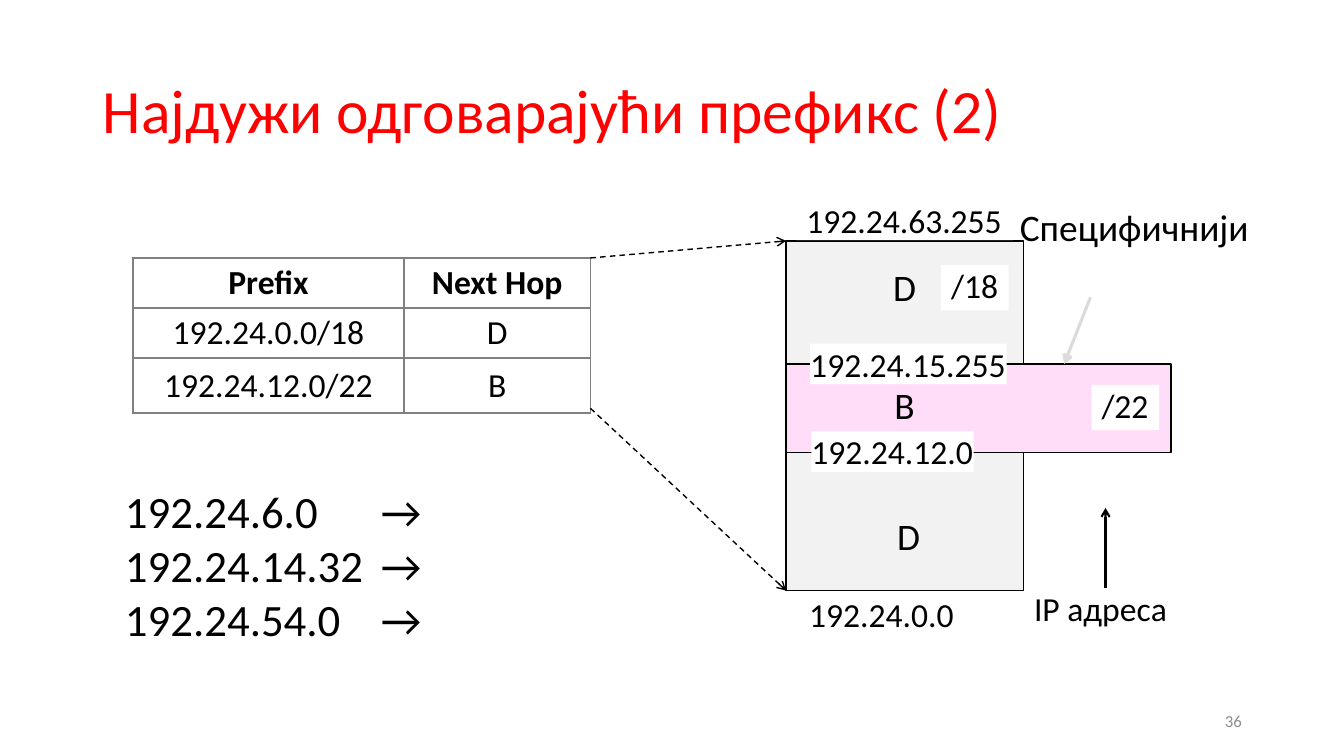
"""Build the slide on longest matching prefix routing."""
from lxml.etree import SubElement as Sub
from pptx import Presentation
from pptx.dml.color import RGBColor
from pptx.enum.dml import MSO_LINE as Dash
from pptx.enum.shapes import MSO_CONNECTOR as Link, MSO_SHAPE as Shape
from pptx.enum.text import MSO_ANCHOR as Anchor, PP_ALIGN as Align
from pptx.oxml.ns import qn
from pptx.util import Cm, Pt

rgb = RGBColor.from_string


def write(frame, lines, size, align=Align.LEFT, color="000000", bold=False):
    """Fill a text frame with one run per paragraph."""
    for i, line in enumerate(lines):
        para = frame.add_paragraph() if i else frame.paragraphs[0]
        para.alignment = align
        run = para.add_run()
        run.text = line
        run.font.name = "Calibri"
        run.font.size = Pt(size)
        run.font.bold = bold
        run.font.color.rgb = rgb(color)


deck = Presentation()
deck.slide_width, deck.slide_height = Cm(33.87), Cm(19.05)
slide = deck.slides.add_slide(deck.slide_layouts[5])
shapes = slide.shapes

title = shapes.title
title.left, title.top, title.width, title.height = Cm(2.34), Cm(1.02), Cm(29.21), Cm(3.68)
title.text_frame.vertical_anchor = Anchor.MIDDLE
write(title.text_frame, ["Најдужи одговарајући префикс (2)"], 44, color="FF0000")
title.text_frame.paragraphs[0].line_spacing = 0.9

rows = [("Prefix", "Next Hop"), ("192.24.0.0/18", "D"), ("192.24.12.0/22", "B")]
table = shapes.add_table(3, 2, Cm(3.35), Cm(6.5), Cm(11.53), Cm(3.91)).table
for col, width in zip(table.columns, (6.83, 4.7)):
    col.width = Cm(width)
for row, height, texts in zip(table.rows, (1.27, 1.26, 1.38), rows):
    row.height = Cm(height)
    for cell, text in zip(row.cells, texts):
        cell.vertical_anchor = Anchor.MIDDLE
        cell.margin_left = cell.margin_right = Cm(0.18)
        cell.margin_top = cell.margin_bottom = Cm(0.08)
        write(cell.text_frame, [text], 24, Align.CENTER, bold=texts == rows[0])
        props = cell._tc.get_or_add_tcPr()
        for side in ("a:lnL", "a:lnR", "a:lnT", "a:lnB"):
            edge = Sub(props, qn(side), w=str(Pt(1.5)))
            Sub(Sub(edge, qn("a:solidFill")), qn("a:srgbClr"), val="808080")
        cell.fill.solid()
        cell.fill.fore_color.rgb = rgb("FFFFFF")

blocks = [
    (19.81, 6.07, 5.99, 8.81, "F2F2F2"),
    (19.81, 9.17, 9.7, 2.24, "FFDDF9"),
]
for left, top, width, height, color in blocks:
    block = shapes.add_shape(Shape.RECTANGLE, Cm(left), Cm(top), Cm(width), Cm(height))
    block.shadow.inherit = False
    block.fill.solid()
    block.fill.fore_color.rgb = rgb(color)
    block.line.color.rgb = rgb("000000")
    block.line.width = Pt(1)

labels = [
    ("192.24.0.0", 20.14, 14.96, 4.17, 1.02, 0.25),
    ("192.24.63.255", 20.07, 5.03, 5.46, 1.02, 0.25),
    ("/18", 23.72, 6.68, 1.7, 1.14, 0.25),
    ("/22", 27.51, 9.7, 1.7, 1.14, 0.25),
    ("192.24.12.0", 20.45, 10.87, 4.09, 1.02, 0),
    ("192.24.15.255", 20.42, 8.66, 4.95, 1.02, 0),
]
for text, left, top, width, height, inset in labels:
    label = shapes.add_shape(Shape.RECTANGLE, Cm(left), Cm(top), Cm(width), Cm(height))
    label.shadow.inherit = False
    label.fill.solid()
    label.fill.fore_color.rgb = rgb("FFFFFF")
    label.line.fill.background()
    frame = label.text_frame
    frame.word_wrap = False
    frame.vertical_anchor = Anchor.TOP
    frame.margin_left = frame.margin_right = Cm(inset)
    frame.margin_top = frame.margin_bottom = 0
    write(frame, [text], 24)

arrows = [
    (27.86, 14.81, 27.86, 12.8, "000000", 1.5, None),
    (14.88, 6.5, 19.81, 6.07, "000000", 1, Dash.DASH),
    (14.88, 10.29, 19.81, 14.88, "000000", 1, Dash.DASH),
    (27.48, 7.49, 26.82, 9.17, "DBDBDB", 2.25, None),
]
for x1, y1, x2, y2, color, width, dash in arrows:
    arrow = shapes.add_connector(Link.STRAIGHT, Cm(x1), Cm(y1), Cm(x2), Cm(y2))
    arrow.line.color.rgb = rgb(color)
    arrow.line.width = Pt(width)
    arrow.line.dash_style = dash
    Sub(arrow.line._get_or_add_ln(), qn("a:tailEnd"), type="arrow")
    Sub(arrow._element.spPr, qn("a:effectLst"))

tests = ["192.24.6.0\t→", "192.24.14.32\t→", "192.24.54.0\t→"]
notes = [
    (["36"], 23.93, 17.65, 7.62, 1.02, 12, Align.RIGHT, "8C8C8C", Anchor.MIDDLE),
    (["IP адреса"], 25.81, 14.68, 3.89, 1.27, 24, Align.LEFT, "000000", Anchor.TOP),
    (tests, 2.9, 12.07, 8.36, 4.37, 32, Align.LEFT, "000000", Anchor.TOP),
    (["Специфичнији"], 25.43, 5.03, 6.32, 1.4, 26.7, Align.CENTER, "000000", Anchor.TOP),
    (["D"], 21.54, 12.8, 2.72, 1.4, 26.7, Align.CENTER, "000000", Anchor.TOP),
    (["B"], 21.44, 9.5, 2.72, 1.4, 26.7, Align.CENTER, "000000", Anchor.TOP),
    (["D"], 21.44, 6.53, 2.72, 1.4, 26.7, Align.CENTER, "000000", Anchor.TOP),
]
for lines, left, top, width, height, size, align, color, anchor in notes:
    frame = shapes.add_textbox(Cm(left), Cm(top), Cm(width), Cm(height)).text_frame
    frame.word_wrap = len(lines[0]) < 3 or lines is tests
    frame.vertical_anchor = anchor
    write(frame, lines, size, align, color)
    if lines is tests:
        for para in frame.paragraphs:
            tabs = Sub(para._p.get_or_add_pPr(), qn("a:tabLst"))
            Sub(tabs, qn("a:tab"), pos=str(Cm(6.45)), algn="l")

deck.save("out.pptx")
